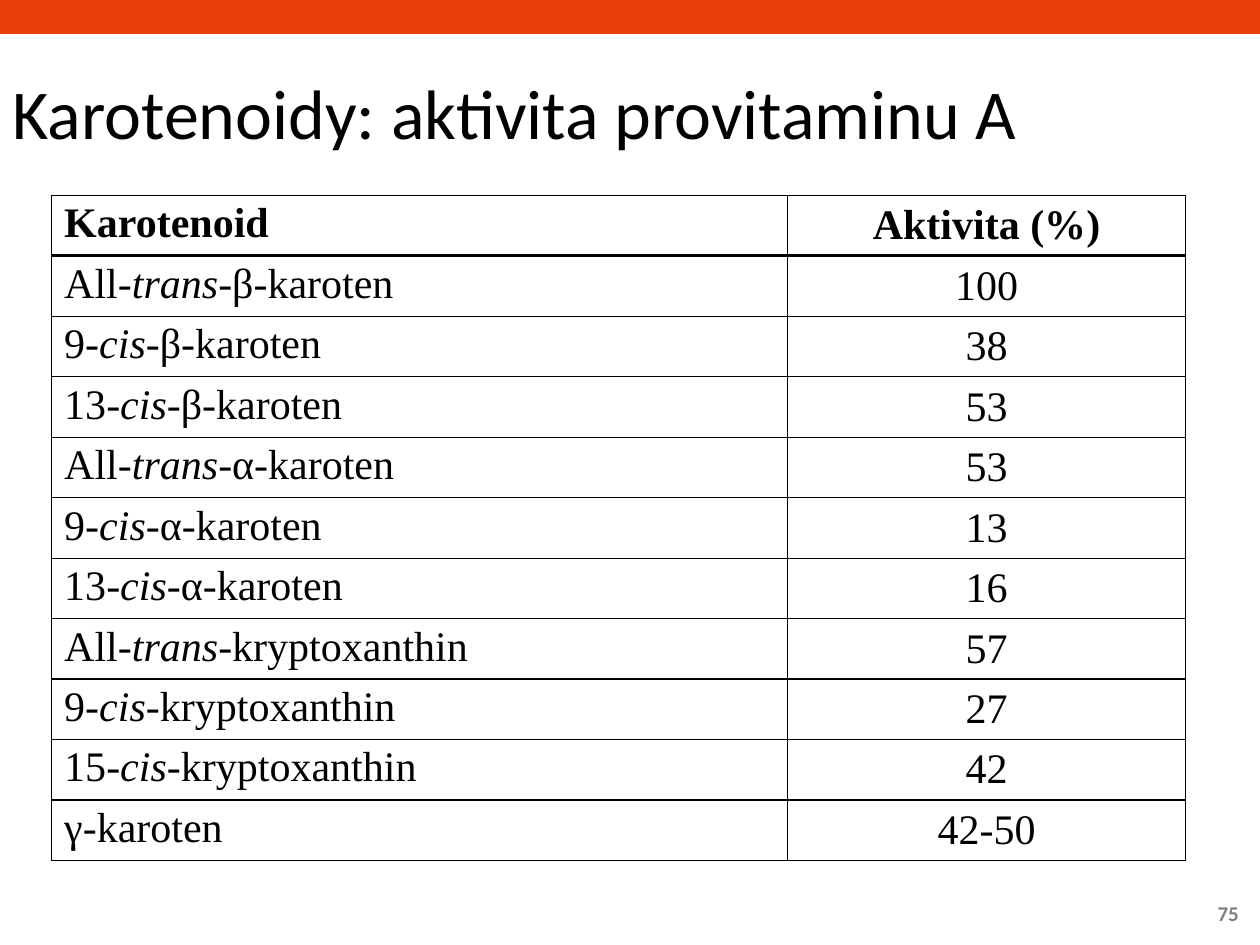
from dataclasses import dataclass

from pptx import Presentation
from pptx.dml.color import RGBColor
from pptx.enum.shapes import MSO_SHAPE
from pptx.enum.text import MSO_ANCHOR, MSO_AUTO_SIZE, PP_ALIGN
from pptx.oxml import parse_xml
from pptx.oxml.ns import nsdecls
from pptx.util import Inches, Pt

RECTANGLE = MSO_SHAPE.RECTANGLE
TOP, MIDDLE = MSO_ANCHOR.TOP, MSO_ANCHOR.MIDDLE
LEFT, CENTER, RIGHT = PP_ALIGN.LEFT, PP_ALIGN.CENTER, PP_ALIGN.RIGHT
NO_AUTOFIT = MSO_AUTO_SIZE.NONE


@dataclass(frozen=True)
class Theme:
    accent: str = "E93C09"
    ink: str = "000000"
    muted: str = "808080"
    heading_font: str = "Calibri"
    table_font: str = "Times New Roman"
    title_size: float = 40
    table_size: float = 24
    number_size: float = 12
    inner_line: float = 0.75
    outer_line: float = 1
    header_line: float = 2


THEME = Theme()
TITLE_FORMAT = {"name": THEME.heading_font, "size": Pt(THEME.title_size), "bold": False}
TABLE_FORMAT = {"name": THEME.table_font, "size": Pt(THEME.table_size)}
NUMBER_FORMAT = {"name": THEME.heading_font, "size": Pt(THEME.number_size), "bold": True}

HEADINGS = ("Karotenoid", "Aktivita (%)")
# Text between asterisks is set in italics
CAROTENOIDS = [
    ("All-*trans*-β-karoten", "100"),
    ("9-*cis*-β-karoten", "38"),
    ("13-*cis*-β-karoten", "53"),
    ("All-*trans*-α-karoten", "53"),
    ("9-*cis*-α-karoten", "13"),
    ("13-*cis*-α-karoten", "16"),
    ("All-*trans*-kryptoxanthin", "57"),
    ("9-*cis*-kryptoxanthin", "27"),
    ("15-*cis*-kryptoxanthin", "42"),
    ("γ-karoten", "42-50"),
]
COLUMN_WIDTHS = (5.84, 3.16)


def apply(target, values):
    for name, value in values.items():
        setattr(target, name, value)


def add_span(para, text, values, color=THEME.ink):
    span = para.add_run()
    span.text = text
    apply(span.font, values)
    span.font.color.rgb = RGBColor.from_string(color)


def place(shape, box):
    apply(shape, dict(zip(("left", "top", "width", "height"), map(Inches, box))))


def add_banner(page, box):
    banner = page.shapes.add_shape(RECTANGLE, *map(Inches, box))
    banner.shadow.inherit = False
    banner.fill.solid()
    banner.fill.fore_color.rgb = RGBColor.from_string(THEME.accent)
    banner.line.fill.background()


def add_page_number(page, box, number):
    frame = page.shapes.add_textbox(*map(Inches, box)).text_frame
    apply(frame, {"word_wrap": True, "vertical_anchor": MIDDLE})
    para = frame.paragraphs[0]
    para.alignment = RIGHT
    add_span(para, number, NUMBER_FORMAT, THEME.muted)


def fill_title(page, box, text):
    title = page.shapes.title
    place(title, box)
    frame = title.text_frame
    apply(frame, {"word_wrap": True, "vertical_anchor": MIDDLE, "auto_size": NO_AUTOFIT})
    para = frame.paragraphs[0]
    apply(para, {"alignment": LEFT, "line_spacing": 0.9})
    add_span(para, text, TITLE_FORMAT)


def set_borders(cell, widths):
    """Border widths in points, in the order left, right, top, bottom."""
    properties = cell._tc.get_or_add_tcPr()
    for position, (side, width) in enumerate(zip("LRTB", widths)):
        properties.insert(position, parse_xml(
            f'<a:ln{side} {nsdecls("a")} w="{Pt(width)}"><a:solidFill>'
            f'<a:srgbClr val="{THEME.ink}"/></a:solidFill></a:ln{side}>'))


def fill_cell(cell, text, is_header, is_value):
    cell.fill.background()
    apply(cell, {"margin_top": Inches(0.04), "margin_bottom": Inches(0.04),
                 "vertical_anchor": MIDDLE if is_value else TOP})
    para = cell.text_frame.paragraphs[0]
    para.alignment = CENTER if is_value else LEFT
    indents = para._p.get_or_add_pPr()
    indents.set("marL", str(Inches(0.38)))
    indents.set("indent", str(-Inches(0.38)))
    for index, part in enumerate(text.split("*")):
        add_span(para, part, {**TABLE_FORMAT, "bold": is_header, "italic": index % 2 == 1})


def add_activity_table(page, box):
    rows = [HEADINGS, *CAROTENOIDS]
    last = len(rows) - 1
    table = page.shapes.add_table(len(rows), len(HEADINGS), *map(Inches, box)).table
    apply(table, {"first_row": False, "horz_banding": False})
    for column, width in zip(table.columns, COLUMN_WIDTHS):
        column.width = Inches(width)
    inner, outer, header = THEME.inner_line, THEME.outer_line, THEME.header_line
    # Horizontal rules from the top edge to the bottom edge
    rules = [outer, header] + [inner] * (last - 1) + [outer]
    # Vertical rules from the left edge to the right edge
    uprights = [outer, inner, outer]
    for row, texts in enumerate(rows):
        for column, text in enumerate(texts):
            cell = table.cell(row, column)
            fill_cell(cell, text, row == 0, column == 1)
            set_borders(cell, uprights[column:column + 2] + rules[row:row + 2])


def main():
    deck = Presentation()
    apply(deck, {"slide_width": Inches(10), "slide_height": Inches(7.5)})
    page = deck.slides.add_slide(deck.slide_layouts.get_by_name("Title Only"))
    add_banner(page, (0, 0, 10, 0.27))
    add_page_number(page, (9.25, 7.05, 0.68, 0.4), "75")
    fill_title(page, (0, 0.3, 9, 1.25), "Karotenoidy: aktivita provitaminu A")
    add_activity_table(page, (0.41, 1.55, 9, 0.47 * (len(CAROTENOIDS) + 1)))
    deck.save("out.pptx")


if __name__ == "__main__":
    main()
